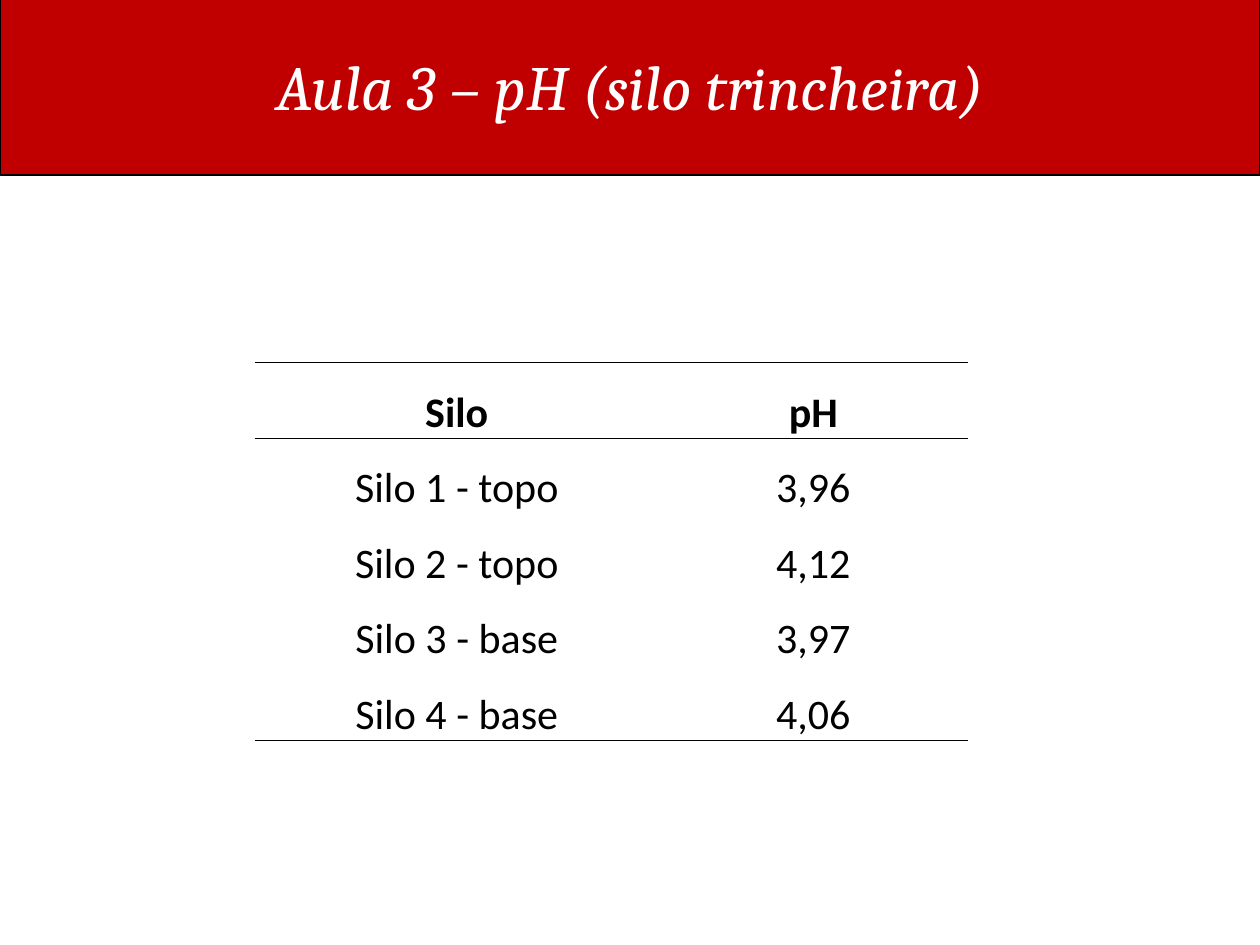
from dataclasses import dataclass
from lxml.etree import SubElement
from pptx import Presentation
from pptx.dml.color import RGBColor
from pptx.enum.text import MSO_ANCHOR, PP_ALIGN
from pptx.oxml.ns import qn
from pptx.util import Inches, Pt

TITLE = "Aula 3 – pH (silo trincheira)"
ROWS = [
    ("Silo", "pH"),
    ("Silo 1 - topo", "3,96"),
    ("Silo 2 - topo", "4,12"),
    ("Silo 3 - base", "3,97"),
    ("Silo 4 - base", "4,06"),
]
RULES = {0, 1, len(ROWS)}


@dataclass(frozen=True)
class Theme:
    band: str = "C00000"
    ink: str = "000000"
    paper: str = "FFFFFF"
    title_font: str = "Cambria"
    body_font: str = "Calibri"
    title_size: int = 36
    body_size: int = 24
    outline: float = 0.75
    rule: float = 0.5


T = Theme()
SLIDE_W, SLIDE_H = 10, 7.5
BAND_TOP, BAND_H = -0.03, 1.42
TABLE_LEFT, TABLE_TOP = 2.02, 2.88
COL_W, ROW_H = (3.21, 2.45), 0.6


def write(tf, text, font, size, color, bold=False, italic=False):
    p = tf.paragraphs[0]
    p.alignment = PP_ALIGN.CENTER
    r = p.add_run()
    r.text = text
    f = r.font
    f.name, f.size, f.bold, f.italic = font, Pt(size), bold, italic
    f.color.rgb = RGBColor.from_string(color)


def set_borders(cell, ruled):
    tcPr = cell._tc.get_or_add_tcPr()
    for side in ("L", "R", "T", "B"):
        ln = SubElement(tcPr, qn(f"a:ln{side}"), w=str(Pt(T.rule)))
        if side in ruled:
            fill = SubElement(ln, qn("a:solidFill"))
            SubElement(fill, qn("a:srgbClr"), val=T.ink)
        else:
            SubElement(ln, qn("a:noFill"))


def add_title(s):
    sp = s.shapes.title
    sp.left, sp.top = Inches(0), Inches(BAND_TOP)
    sp.width, sp.height = Inches(SLIDE_W), Inches(BAND_H)
    sp.fill.solid()
    sp.fill.fore_color.rgb = RGBColor.from_string(T.band)
    sp.line.color.rgb = RGBColor.from_string(T.ink)
    sp.line.width = Pt(T.outline)
    tf = sp.text_frame
    tf.vertical_anchor = MSO_ANCHOR.MIDDLE
    write(tf, TITLE, T.title_font, T.title_size, T.paper, italic=True)


def add_ph_table(s):
    table = s.shapes.add_table(
        len(ROWS), len(COL_W), Inches(TABLE_LEFT), Inches(TABLE_TOP),
        Inches(sum(COL_W)), Inches(ROW_H * len(ROWS))).table
    table.first_row = table.horz_banding = False
    for col, w in zip(table.columns, COL_W):
        col.width = Inches(w)
    for i, row in enumerate(ROWS):
        table.rows[i].height = Inches(ROW_H)
        ruled = {side for side, edge in (("T", i), ("B", i + 1)) if edge in RULES}
        for j, text in enumerate(row):
            cell = table.cell(i, j)
            cell.margin_left = cell.margin_right = cell.margin_top = Inches(0.01)
            cell.margin_bottom = 0
            cell.vertical_anchor = MSO_ANCHOR.BOTTOM
            set_borders(cell, ruled)
            cell.fill.background()
            write(cell.text_frame, text, T.body_font, T.body_size, T.ink, bold=i == 0)


def main():
    prs = Presentation()
    prs.slide_width, prs.slide_height = Inches(SLIDE_W), Inches(SLIDE_H)
    s = prs.slides.add_slide(prs.slide_layouts[5])
    add_title(s)
    add_ph_table(s)
    prs.save("out.pptx")


if __name__ == "__main__":
    main()
